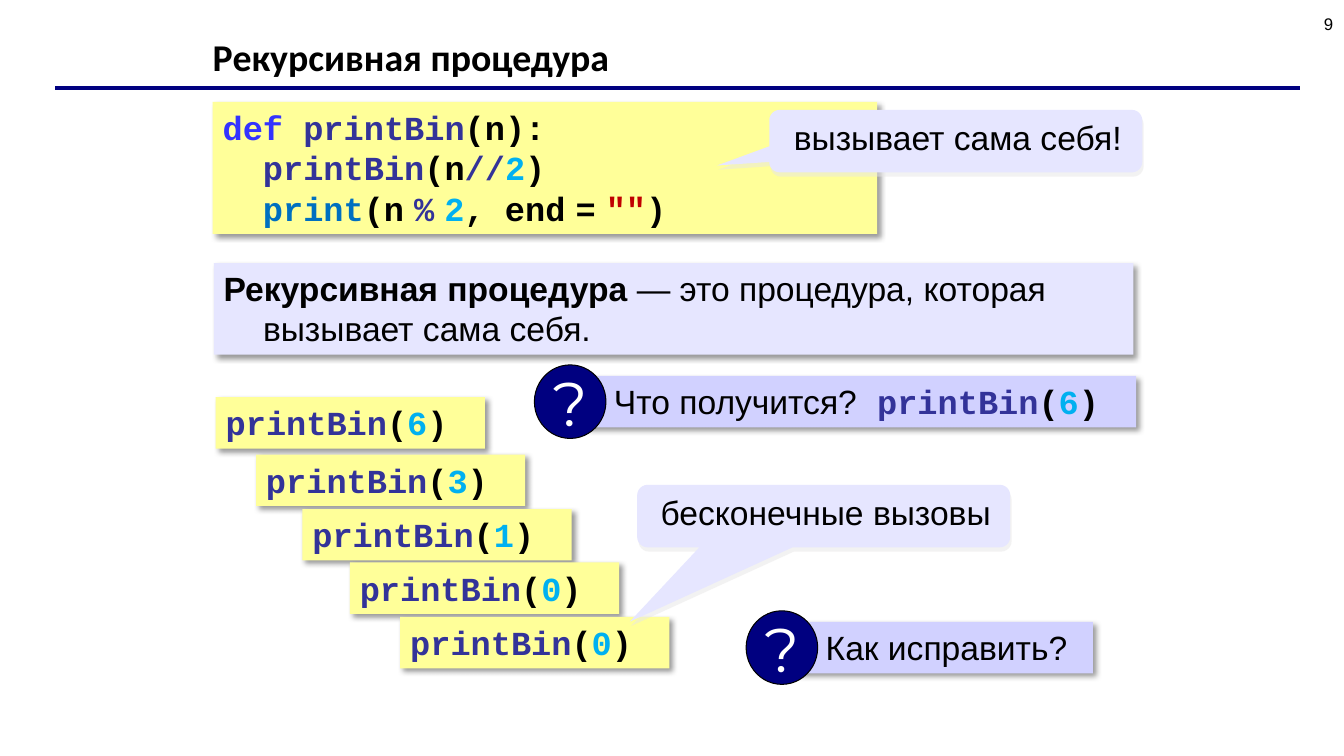
from dataclasses import dataclass

from lxml.etree import SubElement
from pptx import Presentation
from pptx.dml.color import RGBColor
from pptx.enum.shapes import MSO_CONNECTOR, MSO_SHAPE
from pptx.enum.text import MSO_ANCHOR, PP_ALIGN
from pptx.oxml.ns import qn
from pptx.util import Pt

PX = 9144  # 100 px to the inch


@dataclass(frozen=True)
class Theme:
    navy: str = "000080"
    black: str = "000000"
    white: str = "FFFFFF"
    code_fill: str = "FFFF99"
    note_fill: str = "E6E6FF"
    question_fill: str = "D1D1FF"
    callout_shadow: str = "E7E6E6"
    title_size: int = 27
    body_size: int = 24
    half_size: int = 12
    mark_size: int = 44


THEME = Theme()

# style: font, colour, bold, size
STYLES = {
    "title": ("Calibri", THEME.black, True, THEME.title_size),
    "number": ("Arial", THEME.black, False, THEME.half_size),
    "text": ("Arial", THEME.black, False, THEME.body_size),
    "strong": ("Arial", THEME.black, True, THEME.body_size),
    "mark": ("Montserrat", THEME.white, False, THEME.mark_size),
    "keyword": ("Courier New", "3333FF", True, THEME.body_size),
    "name": ("Courier New", "333399", True, THEME.body_size),
    "code": ("Courier New", THEME.black, True, THEME.body_size),
    "digit": ("Courier New", "00B0F0", True, THEME.body_size),
    "builtin": ("Courier New", "0070C0", True, THEME.body_size),
    "string": ("Courier New", "C00000", True, THEME.body_size),
    "thin": ("Courier New", THEME.black, True, THEME.half_size),
}


def call(argument):
    return [("printBin", "name"), ("(", "code"), (argument, "digit"), (")", "code")]


TITLE = [("Рекурсивная процедура", "title")]
PAGE_NUMBER = [("9", "number")]
DEFINITION = [
    ("Рекурсивная процедура ", "strong"),
    ("— это процедура, которая вызывает сама себя.", "text"),
]
# level, runs
CODE = [
    (0, [("def ", "keyword"), ("printBin", "name"), ("(n):", "code")]),
    (1, [("printBin", "name"), ("(n", "code"), ("//", "name"), ("2", "digit"), (")", "code")]),
    (1, [("print", "builtin"), ("(n", "code"), (" ", "thin"), ("%", "name"), (" ", "thin"),
         ("2", "digit"), (", end", "code"), (" ", "thin"), ("=", "code"), (" ", "thin"),
         ('""', "string"), (")", "code")]),
]
# left, top, argument
CALLS = [(214, 394, "6"), (254, 451, "3"), (300, 505, "1"), (347, 558, "0"), (397, 612, "0")]
# left, top, width, runs
QUESTIONS = [
    (581, 373, 546, [("Что получится?", "text"), (" ", "code")] + call("6")),
    (791, 617, 293, [("Как исправить?", "text")]),
]
# left, top, tail x and y as shares of the size, text
CALLOUTS = [
    (763, 109, -0.64, 0.39, "вызывает сама себя!"),
    (632, 481, -0.52, 1.69, "бесконечные вызовы"),
]
CODE_INDENT = 40
HANGING_INDENT = 39
ROW_HEIGHT = 51


def emu(*lengths):
    return [length * PX for length in lengths]


def write(para, runs, align=PP_ALIGN.LEFT, spacing=None):
    para.alignment = align
    para.line_spacing = spacing
    for text, style in runs:
        font_name, color, bold, size = STYLES[style]
        span = para.add_run()
        span.text = text
        span.font.name = font_name
        span.font.size = Pt(size)
        span.font.bold = bold
        span.font.color.rgb = RGBColor.from_string(color)


def indent(para, left, first=0):
    properties = para._p.get_or_add_pPr()
    properties.set("marL", str(left * PX))
    properties.set("indent", str(first * PX))


def add_shadow(shape, color, opacity, blur, distance, angle):
    """Blur and distance are points, opacity is a percentage, angle is degrees."""
    effects = shape._element.spPr.find(qn("a:effectLst"))
    shadow = SubElement(effects, qn("a:outerShdw"), blurRad=str(Pt(blur)),
                        dist=str(Pt(distance)), dir=str(angle * 60000),
                        algn="ctr", rotWithShape="0")
    tone = SubElement(shadow, qn("a:srgbClr"), val=color)
    SubElement(tone, qn("a:alpha"), val=str(opacity * 1000))


def add_filled(shapes, kind, frame, fill, anchor=MSO_ANCHOR.MIDDLE):
    shape = shapes.add_shape(kind, *emu(*frame))
    shape.shadow.inherit = False
    shape.fill.solid()
    shape.fill.fore_color.rgb = RGBColor.from_string(fill)
    shape.line.fill.background()
    shape.text_frame.vertical_anchor = anchor
    shape.text_frame.word_wrap = True
    return shape


def add_panel(shapes, frame, fill):
    panel = add_filled(shapes, MSO_SHAPE.RECTANGLE, frame, fill, MSO_ANCHOR.TOP)
    add_shadow(panel, THEME.black, 40, 4, 3, 45)
    return panel


def add_question(slide, left, top, width, runs):
    group = slide.shapes.add_group_shape()
    panel = add_panel(group.shapes, (left, top, width, ROW_HEIGHT), THEME.question_fill)
    panel.text_frame.margin_left = 28 * PX
    write(panel.text_frame.paragraphs[0], runs)
    circle = add_filled(group.shapes, MSO_SHAPE.OVAL, (left - 51, top - 11, 71, 73), THEME.navy)
    circle.line.color.rgb = RGBColor.from_string(THEME.black)
    circle.line.width = Pt(0.75)
    circle.text_frame.word_wrap = False
    write(circle.text_frame.paragraphs[0], [("?", "mark")], PP_ALIGN.CENTER)


def add_callout(slide, left, top, tail_x, tail_y, text):
    callout = add_filled(slide.shapes, MSO_SHAPE.ROUNDED_RECTANGULAR_CALLOUT,
                         (left, top, 370, 62), THEME.note_fill)
    callout.adjustments[0] = tail_x
    callout.adjustments[1] = tail_y
    add_shadow(callout, THEME.callout_shadow, 50, 0, 3.2, 72)
    callout.text_frame.margin_left, callout.text_frame.margin_right = emu(6, 2)
    write(callout.text_frame.paragraphs[0], [(text, "text")], PP_ALIGN.CENTER, 0.8)


def add_heading(slide):
    rule = slide.shapes.add_connector(MSO_CONNECTOR.STRAIGHT, *emu(55, 87, 1289, 87))
    rule.line.color.rgb = RGBColor.from_string(THEME.navy)
    rule.line.width = Pt(3)
    SubElement(rule._element.spPr, qn("a:effectLst"))

    title = slide.shapes.title
    title.left, title.top, title.width, title.height = emu(201, 33, 916, 52)
    title.text_frame.vertical_anchor = MSO_ANCHOR.MIDDLE
    write(title.text_frame.paragraphs[0], TITLE, spacing=0.9)

    number = slide.shapes.add_textbox(*emu(1021, -2, 311, 52))
    number.text_frame.word_wrap = True
    number.text_frame.vertical_anchor = MSO_ANCHOR.MIDDLE
    write(number.text_frame.paragraphs[0], PAGE_NUMBER, PP_ALIGN.RIGHT)


def main():
    deck = Presentation()
    deck.slide_width, deck.slide_height = emu(1333, 750)
    slide = deck.slides.add_slide(deck.slide_layouts[5])
    add_heading(slide)

    definition = add_panel(slide.shapes, (212, 261, 912, 91), THEME.note_fill)
    para = definition.text_frame.paragraphs[0]
    indent(para, HANGING_INDENT, -HANGING_INDENT)
    write(para, DEFINITION)

    listing = add_panel(slide.shapes, (211, 101, 659, 131), THEME.code_fill).text_frame
    for row, (level, runs) in enumerate(CODE):
        para = listing.add_paragraph() if row else listing.paragraphs[0]
        indent(para, level * CODE_INDENT)
        write(para, runs)

    for left, top, argument in CALLS:
        box = add_panel(slide.shapes, (left, top, 267, ROW_HEIGHT), THEME.code_fill)
        write(box.text_frame.paragraphs[0], call(argument))
    for question in QUESTIONS:
        add_question(slide, *question)
    for callout in CALLOUTS:
        add_callout(slide, *callout)
    deck.save("out.pptx")


if __name__ == "__main__":
    main()
